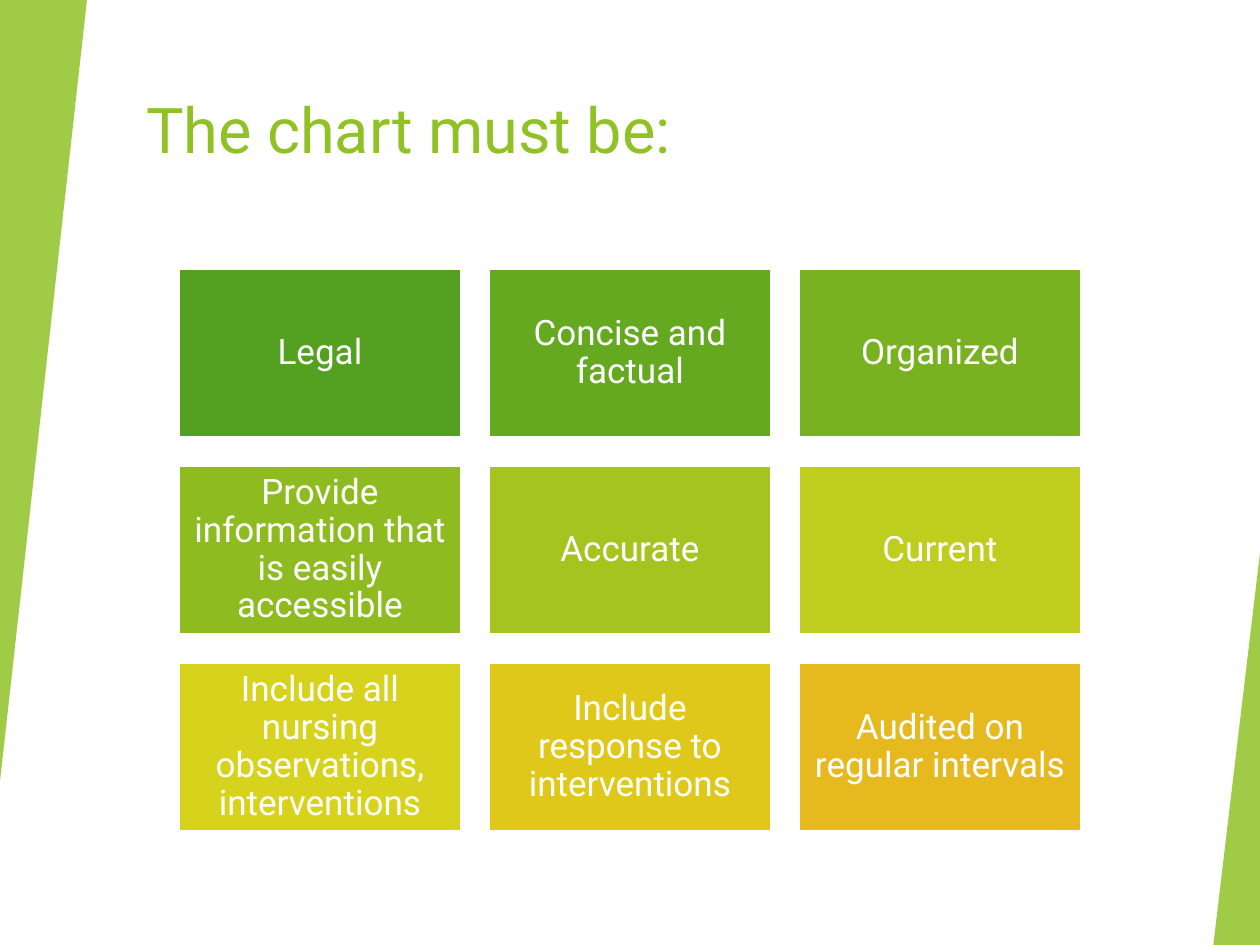
from lxml import etree
from pptx import Presentation
from pptx.dml.color import RGBColor
from pptx.enum.shapes import MSO_SHAPE
from pptx.enum.text import MSO_ANCHOR, MSO_AUTO_SIZE, PP_ALIGN
from pptx.oxml.ns import qn
from pptx.util import Pt

RECTANGLE = MSO_SHAPE.RECTANGLE
TRIANGLE = MSO_SHAPE.ISOSCELES_TRIANGLE
TOP, MIDDLE = MSO_ANCHOR.TOP, MSO_ANCHOR.MIDDLE
LEFT, CENTER = PP_ALIGN.LEFT, PP_ALIGN.CENTER
NO_AUTOFIT = MSO_AUTO_SIZE.NONE

FONT = "Roboto"
GREEN = "90C226"
WHITE = "FFFFFF"
COLUMNS = 3
GRID_LEFT, GRID_TOP = 102.24, 153.36
TILE_WIDTH, TILE_HEIGHT = 161.28, 96.48
COLUMN_STEP, ROW_STEP = 177.12, 112.68

QUALITIES = [
    ("Legal", "54A021"),
    ("Concise and factual", "65A921"),
    ("Organized", "79B220"),
    ("Provide information that is easily accessible", "8EBB1F"),
    ("Accurate", "A5C41F"),
    ("Current", "BECD1E"),
    ("Include all nursing observations, interventions", "D7D31D"),
    ("Include response to interventions", "E0C81B"),
    ("Audited on regular intervals", "E6B91E"),
]


def paint(color_format, color):
    color_format.rgb = RGBColor.from_string(color)


def write(box, text, size, color, align, anchor):
    frame = box.text_frame
    frame.word_wrap = True
    frame.auto_size = NO_AUTOFIT
    frame.vertical_anchor = anchor
    para = frame.paragraphs[0]
    para.alignment = align
    span = para.add_run()
    span.text = text
    span.font.name = FONT
    span.font.size = Pt(size)
    paint(span.font.color, color)
    return para


def add_title(page, text):
    title = page.shapes.title
    title.left, title.top = Pt(76.32), Pt(48.24)
    title.width, title.height = Pt(601.92), Pt(86.4)
    write(title, text, 36, GREEN, LEFT, TOP)


def add_filled(page, kind, left, top, width, height, color):
    shape = page.shapes.add_shape(kind, Pt(left), Pt(top), Pt(width), Pt(height))
    shape.shadow.inherit = False
    shape.fill.solid()
    paint(shape.fill.fore_color, color)
    return shape


def add_edge(page, left, top, width, height, rotation):
    edge = add_filled(page, TRIANGLE, left, top, width, height, GREEN)
    edge.adjustments[0] = 1
    edge.rotation = rotation
    edge.line.fill.background()
    color = edge.fill._xPr.find(qn("a:solidFill"))[0]
    etree.SubElement(color, qn("a:alpha"), val="85000")


def add_tile(page, index, text, color):
    row, column = divmod(index, COLUMNS)
    left = GRID_LEFT + column * COLUMN_STEP
    top = GRID_TOP + row * ROW_STEP
    tile = add_filled(page, RECTANGLE, left, top, TILE_WIDTH, TILE_HEIGHT, color)
    paint(tile.line.color, WHITE)
    tile.line.width = Pt(1.5)
    frame = tile.text_frame
    frame.margin_left = frame.margin_right = Pt(6)
    frame.margin_top = frame.margin_bottom = Pt(6)
    para = write(tile, text, 20, WHITE, CENTER, MIDDLE)
    para.line_spacing = 0.9


def main():
    deck = Presentation()
    deck.slide_width, deck.slide_height = Pt(720), Pt(540)
    page = deck.slides.add_slide(deck.slide_layouts[5])
    add_title(page, "The chart must be:")
    add_edge(page, 0, 0, 49.68, 446.4, 180)
    add_edge(page, 693.36, 316.08, 26.64, 223.92, 0)
    for index, (text, color) in enumerate(QUALITIES):
        add_tile(page, index, text, color)
    deck.save("out.pptx")


if __name__ == "__main__":
    main()
